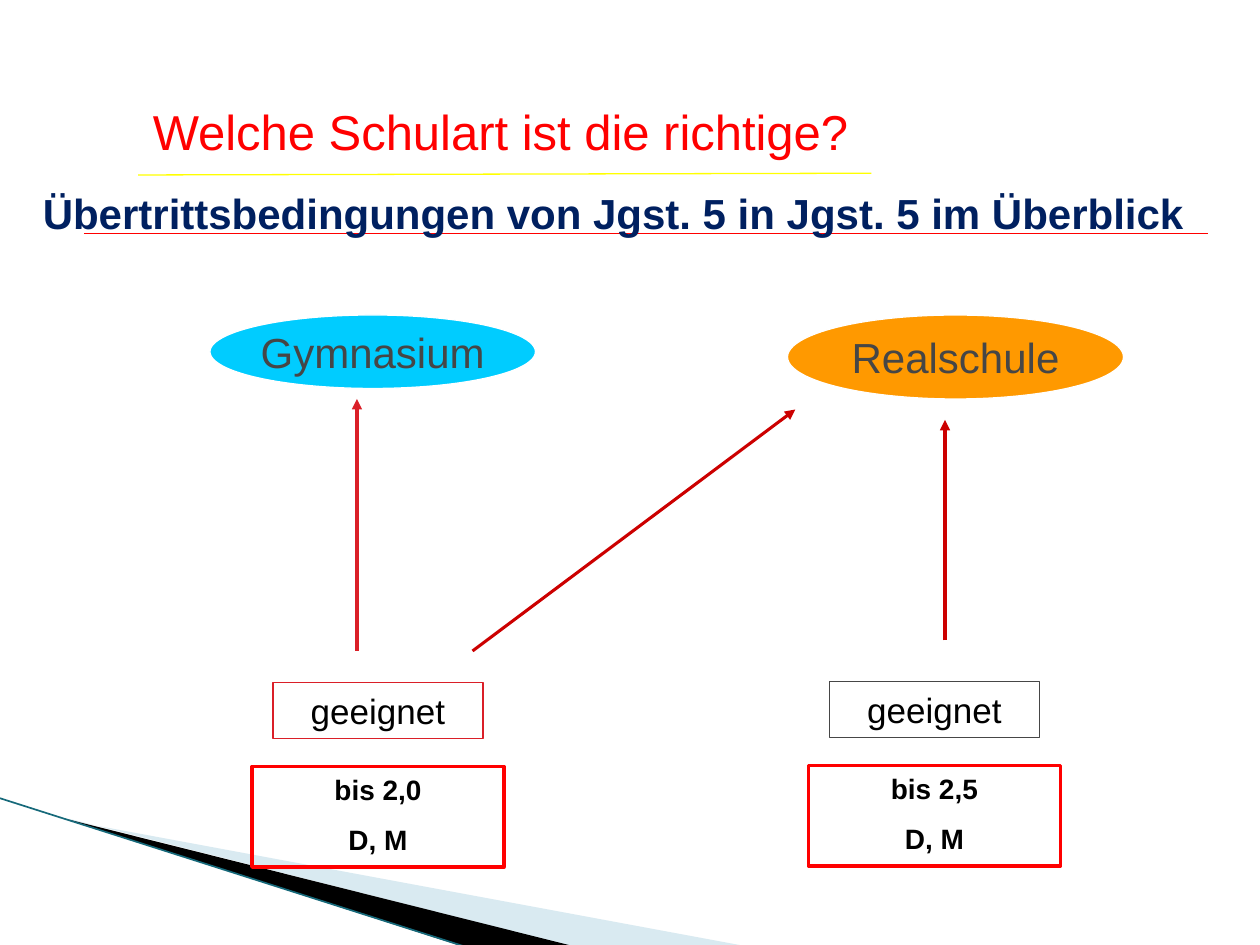
from collections import namedtuple
from dataclasses import dataclass

from lxml import etree
from pptx import Presentation
from pptx.dml.color import RGBColor
from pptx.enum import shapes, text
from pptx.oxml import ns
from pptx.util import Pt

Box = namedtuple("Box", "left top width height")


@dataclass(frozen=True)
class Theme:
    font: str = "Arial"
    title_size: int = 28
    heading_size: int = 24
    label_size: int = 20
    grade_size: int = 16
    red: str = "FF0000"
    yellow: str = "FFFF00"
    navy: str = "002060"
    black: str = "000000"
    white: str = "FFFFFF"
    grey: str = "464646"
    crimson: str = "DA1F28"
    dark_red: str = "CC0000"
    cyan: str = "00CCFF"
    orange: str = "FF9900"
    pale_blue: str = "A0CBDC"
    teal: str = "16697A"


THEME = Theme()


def color(value):
    return RGBColor.from_string(value)


def place(shape, box):
    shape.left, shape.top, shape.width, shape.height = (Pt(value) for value in box)


def write(shape, content, *, size, ink, bold=False, gap=0, wrap=True,
          anchor=text.MSO_ANCHOR.MIDDLE):
    frame = shape.text_frame
    frame.word_wrap = wrap
    frame.auto_size = text.MSO_AUTO_SIZE.NONE
    frame.vertical_anchor = anchor
    frame.margin_left = frame.margin_right = Pt(7.2)
    frame.margin_top = frame.margin_bottom = Pt(3.6)
    frame.text = content
    for index, paragraph in enumerate(frame.paragraphs):
        paragraph.alignment = text.PP_ALIGN.CENTER
        paragraph.space_before = Pt(gap if index else 0)
        paragraph.font.name = THEME.font
        paragraph.font.size = Pt(size)
        paragraph.font.bold = bold
        paragraph.font.color.rgb = color(ink)


def add_line(slide, start, end, ink, width=0.75, arrow=False):
    line = slide.shapes.add_connector(
        shapes.MSO_CONNECTOR.STRAIGHT, *(Pt(value) for value in (*start, *end)))
    line.line.color.rgb = color(ink)
    line.line.width = Pt(width)
    if arrow:
        etree.SubElement(line.line._get_or_add_ln(), ns.qn("a:tailEnd"), type="triangle")
    etree.SubElement(line._element.spPr, ns.qn("a:effectLst"))


def add_preset(slide, preset, box, fill=None, outline=None, width=0.75):
    shape = slide.shapes.add_shape(preset, *(Pt(value) for value in box))
    shape.shadow.inherit = False
    if fill:
        shape.fill.solid()
        shape.fill.fore_color.rgb = color(fill)
    else:
        shape.fill.background()
    shape.line.color.rgb = color(outline)
    shape.line.width = Pt(width)
    return shape


def add_wedge(slide, box, points, fill, opacity=100):
    corners = [(box.left + x, box.top + y) for x, y in points]
    builder = slide.shapes.build_freeform(*corners[0], scale=Pt(1))
    builder.add_line_segments(corners[1:], close=True)
    wedge = builder.convert_to_shape()
    wedge.shadow.inherit = False
    wedge.fill.solid()
    wedge.fill.fore_color.rgb = color(fill)
    wedge.line.fill.background()
    if opacity < 100:
        tint = wedge._element.spPr.find(".//" + ns.qn("a:srgbClr"))
        etree.SubElement(tint, ns.qn("a:alpha"), val=str(opacity * 1000))


def add_corner(slide, box):
    add_wedge(slide, box, [(40, 13), (429, 85), (329, 85), (40, 12)],
              THEME.pale_blue, opacity=40)
    add_wedge(slide, box, [(38.5, 11.5), (329.5, 85), (268, 85.5), (39, 12)], THEME.black)
    add_line(slide, box[:2], (box.left + 268, box.top + 85.5), THEME.teal, 0.95)


def add_header(slide, box):
    title = slide.shapes.title
    place(title, Box(box.left + 48, box.top, 476, 41))
    write(title, "Welche Schulart ist die richtige?", size=THEME.title_size, ink=THEME.red)
    add_line(slide, (box.left + 79, box.top + 45.5), (box.left + 498, box.top + 44.5),
             THEME.yellow)
    add_line(slide, (box.left + 48, box.top + 79), (box.left + 690.5, box.top + 79),
             THEME.red)
    subtitle = slide.shapes.add_textbox(0, 0, 0, 0)
    place(subtitle, Box(box.left, box.top + 49, box.width, 36.5))
    write(subtitle, "Übertrittsbedingungen von Jgst. 5 in Jgst. 5 im Überblick",
          size=THEME.heading_size, ink=THEME.navy, bold=True)


def add_school(slide, box, name, fill):
    school = add_preset(slide, shapes.MSO_SHAPE.OVAL, box, fill, THEME.white)
    write(school, name, size=THEME.heading_size, ink=THEME.grey, wrap=False)


def add_requirement(slide, box, grade, outline):
    rectangle = shapes.MSO_SHAPE.RECTANGLE
    label = add_preset(slide, rectangle, Box(box.left + 12, box.top, box.width - 24, 32),
                       outline=outline)
    write(label, "geeignet", size=THEME.label_size, ink=THEME.black)
    limit = add_preset(slide, rectangle,
                       Box(box.left, box.top + 48, box.width, box.height - 48),
                       outline=THEME.red, width=2)
    write(limit, f"{grade}\nD, M", size=THEME.grade_size, ink=THEME.black, bold=True,
          gap=9, anchor=text.MSO_ANCHOR.TOP)


def add_paths(slide, box):
    for start, end, ink in [
        ((0, 144), (0, 0), THEME.crimson),
        ((66, 144), (250.5, 6), THEME.dark_red),
        ((336, 138), (336, 12), THEME.dark_red),
    ]:
        add_line(slide, (box.left + start[0], box.top + start[1]),
                 (box.left + end[0], box.top + end[1]), ink, 1.75, arrow=True)


def main():
    presentation = Presentation()
    presentation.slide_width, presentation.slide_height = Pt(720), Pt(540)
    slide = presentation.slides.add_slide(presentation.slide_layouts[5])
    add_corner(slide, Box(-0.5, 456, 429, 84))
    add_header(slide, Box(0, 54.5, 701, 86))
    add_school(slide, Box(120, 180, 186, 42), "Gymnasium", THEME.cyan)
    add_school(slide, Box(450, 180, 192, 48), "Realschule", THEME.orange)
    add_paths(slide, Box(204, 228, 336, 144))
    add_requirement(slide, Box(144, 390, 144, 105.5), "bis 2,0", THEME.crimson)
    add_requirement(slide, Box(462, 389.5, 144, 105.5), "bis 2,5", THEME.grey)
    presentation.save("out.pptx")


if __name__ == "__main__":
    main()
